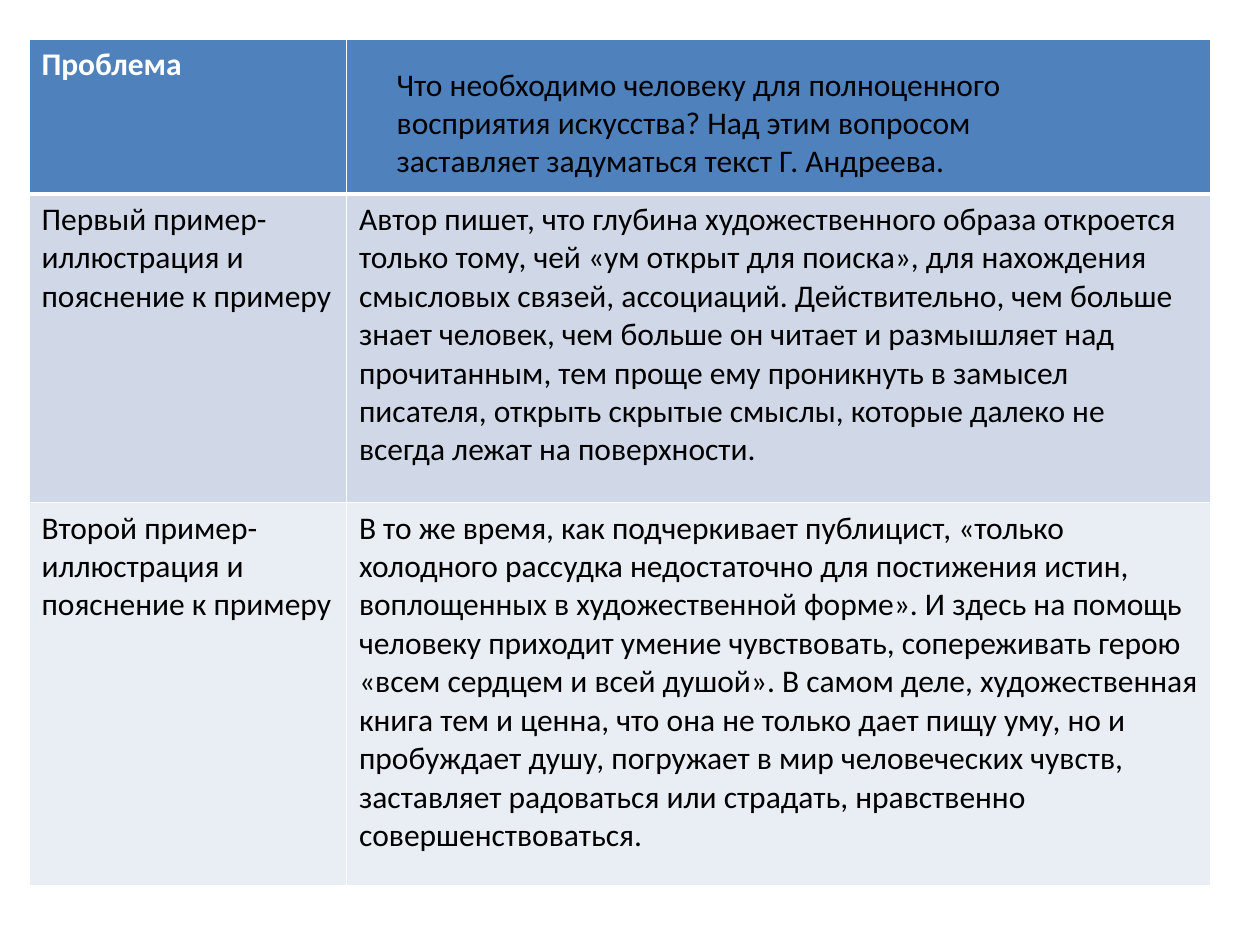
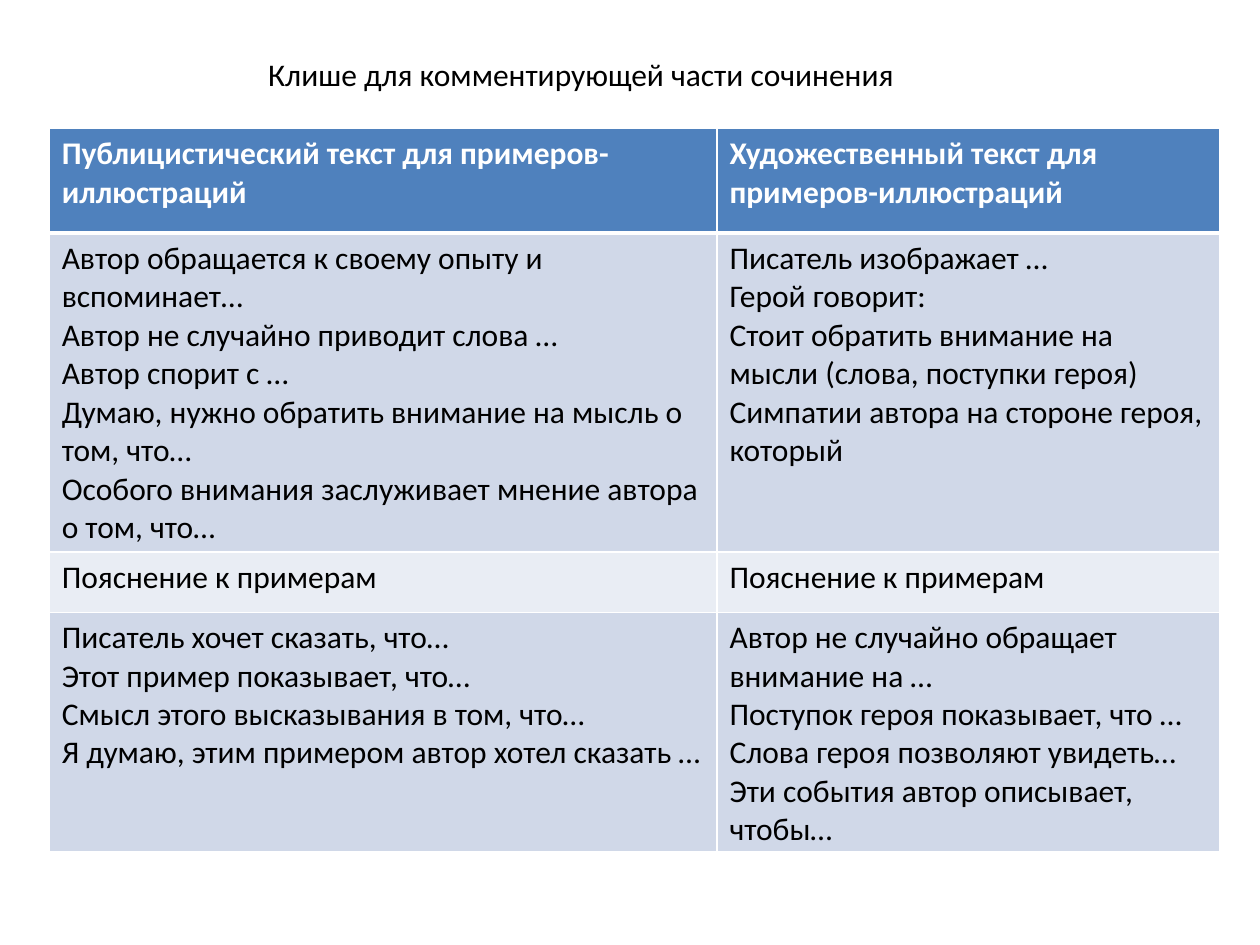
from dataclasses import dataclass

from lxml import etree
from pptx import Presentation
from pptx.dml.color import RGBColor
from pptx.enum import text
from pptx.oxml import ns
from pptx.util import Inches, Pt


@dataclass(frozen=True)
class Theme:
    font: str = "Calibri"
    size: int = 18
    ink: str = "000000"
    header_ink: str = "FFFFFF"
    header_fill: str = "4F81BD"
    band_fills: tuple = ("D0D8E8", "E9EDF4")
    rule: str = "FFFFFF"
    thin: int = 1
    thick: int = 3


THEME = Theme()

PROBLEM = (
    "Что необходимо человеку для полноценного восприятия искусства? "
    "Над этим вопросом заставляет задуматься текст Г. Андреева."
)

COMMENT_ROWS = [
    (["Проблема"], []),
    (
        ["Первый пример-иллюстрация и пояснение к примеру"],
        [
            "Автор пишет, что глубина художественного образа откроется только тому, "
            "чей «ум открыт для поиска», для нахождения смысловых связей, ассоциаций. "
            "Действительно, чем больше знает человек, чем больше он читает и размышляет "
            "над прочитанным, тем проще ему проникнуть в замысел писателя, открыть "
            "скрытые смыслы, которые далеко не всегда лежат на поверхности."
        ],
    ),
    (
        ["Второй пример-иллюстрация и пояснение к примеру"],
        [
            "В то же время, как подчеркивает публицист, «только холодного рассудка "
            "недостаточно для постижения истин, воплощенных в художественной форме». "
            "И здесь на помощь человеку приходит умение чувствовать, сопереживать герою "
            "«всем сердцем и всей душой». В самом деле, художественная книга тем и ценна, "
            "что она не только дает пищу уму, но и пробуждает душу, погружает в мир "
            "человеческих чувств, заставляет радоваться или страдать, нравственно "
            "совершенствоваться."
        ],
    ),
]

EXPLANATION = ["Пояснение к примерам"]

CLICHE_ROWS = [
    (
        ["Публицистический текст для примеров-иллюстраций"],
        ["Художественный текст для примеров-иллюстраций"],
    ),
    (
        [
            "Автор обращается к своему опыту и вспоминает…",
            "Автор не случайно приводит слова …",
            "Автор спорит с …",
            "Думаю, нужно обратить внимание на мысль о том, что…",
            "Особого внимания заслуживает мнение автора о том, что…",
        ],
        [
            "Писатель изображает …",
            "Герой говорит:",
            "Стоит обратить внимание на мысли (слова, поступки героя)",
            "Симпатии автора на стороне героя, который",
        ],
    ),
    (EXPLANATION, EXPLANATION),
    (
        [
            "Писатель хочет сказать, что…",
            "Этот пример показывает, что…",
            "Смысл этого высказывания в том, что…",
            "Я думаю, этим примером автор хотел сказать …",
        ],
        [
            "Автор не случайно обращает внимание на …",
            "Поступок героя показывает, что …",
            "Слова героя позволяют увидеть…",
            "Эти события автор описывает, чтобы…",
        ],
    ),
]


def write(frame, lines, color=THEME.ink, bold=False):
    for index, line in enumerate(lines or [""]):
        paragraph = frame.paragraphs[0] if index == 0 else frame.add_paragraph()
        paragraph.text = line
        font = paragraph.font
        font.name, font.size, font.bold = THEME.font, Pt(THEME.size), bold
        font.color.rgb = RGBColor.from_string(color)


def add_caption(slide, left, top, width, height, caption, wrap=True):
    box = slide.shapes.add_textbox(*map(Inches, (left, top, width, height)))
    frame = box.text_frame
    frame.word_wrap = wrap
    frame.auto_size = text.MSO_AUTO_SIZE.SHAPE_TO_FIT_TEXT
    write(frame, [caption])


def rule_cell(cell, row_number):
    weights = {"lnL": THEME.thin, "lnR": THEME.thin}
    weights["lnT"] = THEME.thick if row_number == 1 else THEME.thin
    weights["lnB"] = THEME.thick if row_number == 0 else THEME.thin
    properties = cell._tc.get_or_add_tcPr()
    for side, weight in weights.items():
        line = etree.SubElement(properties, ns.qn(f"a:{side}"), w=str(Pt(weight)))
        solid = etree.SubElement(line, ns.qn("a:solidFill"))
        etree.SubElement(solid, ns.qn("a:srgbClr"), val=THEME.rule)


def add_banded_table(slide, left, top, widths, heights, rows):
    frame = slide.shapes.add_table(
        len(rows), len(widths), Inches(left), Inches(top),
        Inches(sum(widths)), Inches(sum(heights)),
    )
    table = frame.table
    for column, width in zip(table.columns, widths):
        column.width = Inches(width)
    for number, (row, height, contents) in enumerate(zip(table.rows, heights, rows)):
        row.height = Inches(height)
        is_header = number == 0
        fill = THEME.header_fill if is_header else THEME.band_fills[(number - 1) % 2]
        ink = THEME.header_ink if is_header else THEME.ink
        for cell, lines in zip(row.cells, contents):
            rule_cell(cell, number)
            cell.fill.solid()
            cell.fill.fore_color.rgb = RGBColor.from_string(fill)
            write(cell.text_frame, lines, ink, is_header)


def main():
    deck = Presentation()
    deck.slide_width, deck.slide_height = Inches(10), Inches(7.5)
    blank = deck.slide_layouts[6]

    comment = deck.slides.add_slide(blank)
    add_banded_table(comment, 0.23, 0.31, [2.52, 6.86], [1.23, 2.45, 3.04], COMMENT_ROWS)
    add_caption(comment, 3.05, 0.47, 5.31, 1.01, PROBLEM)

    cliches = deck.slides.add_slide(blank)
    add_caption(cliches, 2.03, 0.39, 5.22, 0.4,
                "Клише для комментирующей части сочинения", wrap=False)
    add_banded_table(cliches, 0.39, 1.02, [5.3, 3.99], [0.83, 2.53, 0.48, 1.9], CLICHE_ROWS)

    deck.save("out.pptx")


if __name__ == "__main__":
    main()
